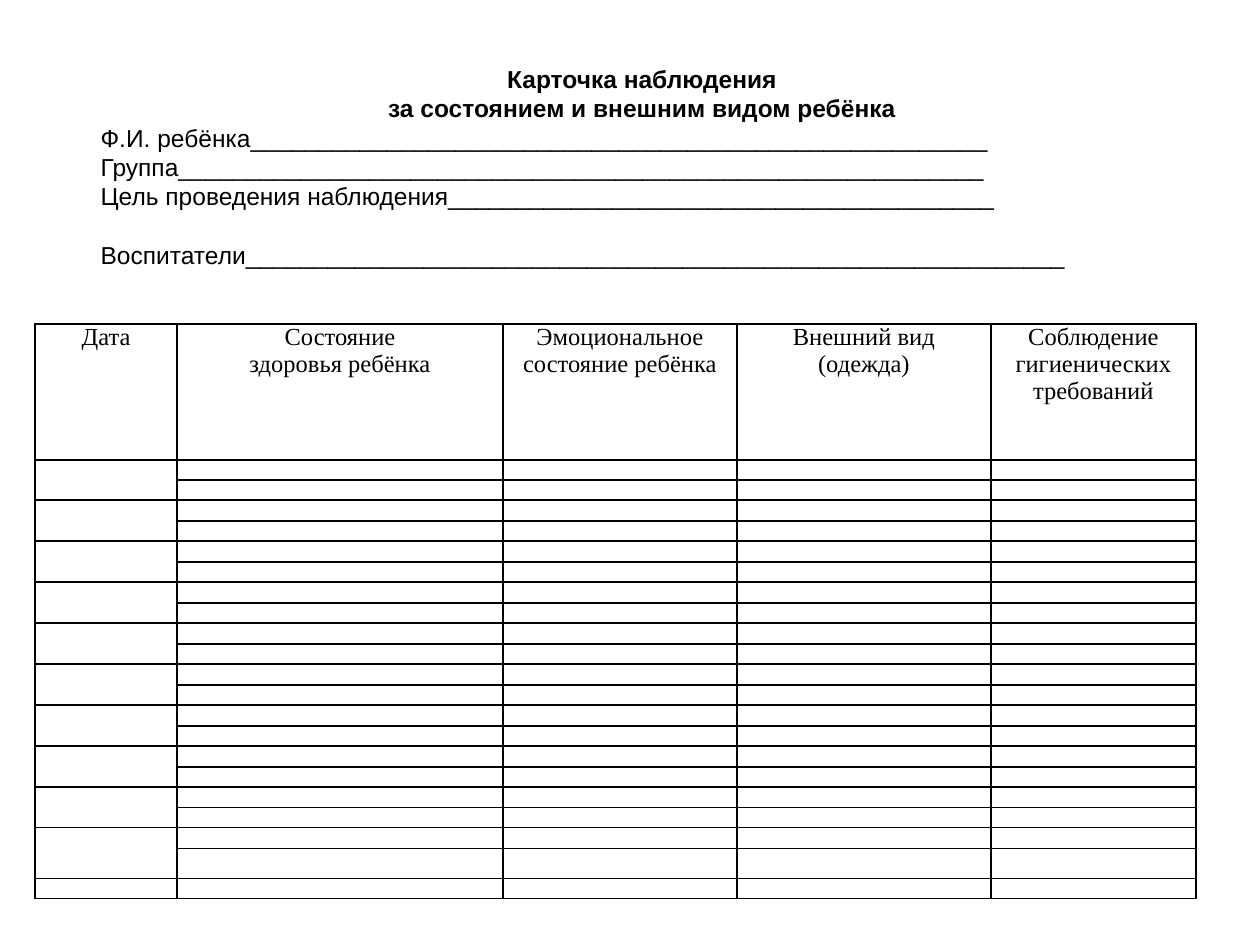
import itertools

import lxml.etree
import pptx
import pptx.dml.color
import pptx.enum.text
import pptx.oxml.ns
import pptx.util

PX = 914400 // 126
BLACK, WHITE = "000000", "FFFFFF"
LINE_PITCH = pptx.util.Pt(16.75)

TITLE = ["Карточка наблюдения", "за состоянием и внешним видом ребёнка"]
FIELDS = [
    "Ф.И. ребёнка______________________________________________________",
    "Группа___________________________________________________________",
    "Цель проведения наблюдения________________________________________",
    "Воспитатели____________________________________________________________",
]
HEADERS = [
    "Дата",
    "Состояние\nздоровья ребёнка",
    "Эмоциональное\nсостояние ребёнка",
    "Внешний вид\n(одежда)",
    "Соблюдение гигиенических требований",
]
COLUMN_WIDTHS = [142, 326, 234, 254, 205]
HEADER_HEIGHT, LAST_PAIR_HEIGHTS = 136, [30, 20]
EVEN_ROWS, EVEN_HEIGHT = 19, 389
DATE_PAIRS = 10


def px(n):
    return pptx.util.Emu(n * PX)


def rgb(color):
    return pptx.dml.color.RGBColor.from_string(color)


def fill_white(item):
    item.fill.solid()
    item.fill.fore_color.rgb = rgb(WHITE)


def sub(parent, tag, **attrs):
    return lxml.etree.SubElement(parent, pptx.oxml.ns.qn(tag), **attrs)


def format_runs(p, font, bold=False):
    for r in p.runs:
        r.font.name, r.font.size, r.font.bold = font, pptx.util.Pt(14), bold
        r.font.color.rgb = rgb(BLACK)


def fill_heading(sp):
    """Centred bold title lines, then the form fields to fill in."""
    sp.left, sp.top, sp.width, sp.height = px(88), px(23), px(1108), px(292)
    fill_white(sp)
    tf = sp.text_frame
    tf.text = "\n".join(TITLE + FIELDS)
    tf.word_wrap = True
    tf.auto_size = pptx.enum.text.MSO_AUTO_SIZE.NONE
    tf.vertical_anchor = pptx.enum.text.MSO_ANCHOR.TOP
    tf.margin_top, tf.margin_bottom = px(41), 0
    align = pptx.enum.text.PP_ALIGN
    for i, p in enumerate(tf.paragraphs):
        in_title = i < len(TITLE)
        p.alignment = align.CENTER if in_title else align.LEFT
        p.line_spacing, p.space_before = LINE_PITCH, 0
        format_runs(p, "Arial", bold=in_title)
    tf.paragraphs[-1].space_before = LINE_PITCH


def format_cell(cell):
    cell.margin_left = cell.margin_right = px(5)
    cell.margin_top = cell.margin_bottom = 0
    tcPr = cell._tc.get_or_add_tcPr()
    for side in ("a:lnL", "a:lnR", "a:lnT", "a:lnB"):
        ln = sub(tcPr, side, w=str(pptx.util.Pt(1)))
        sub(sub(ln, "a:solidFill"), "a:srgbClr", val=BLACK)
    fill_white(cell)
    for p in cell.text_frame.paragraphs:
        if p.runs:
            p.alignment = pptx.enum.text.PP_ALIGN.CENTER
            format_runs(p, "Times New Roman")
        else:
            # A small end mark keeps empty rows at their set height.
            sub(p._p, "a:endParaRPr", sz="800")


def add_observation_table(s):
    edges = [EVEN_HEIGHT * i // EVEN_ROWS for i in range(EVEN_ROWS + 1)]
    even = [b - a for a, b in itertools.pairwise(edges)]
    heights = [HEADER_HEIGHT, *even, *LAST_PAIR_HEIGHTS]
    frame = s.shapes.add_table(len(heights), len(HEADERS), px(35), px(324),
                               px(sum(COLUMN_WIDTHS)), px(sum(heights)))
    table = frame.table
    table.first_row = table.horz_banding = False
    for column, width in zip(table.columns, COLUMN_WIDTHS):
        column.width = px(width)
    for row, height in zip(table.rows, heights):
        row.height = px(height)
    for i, header in enumerate(HEADERS):
        table.cell(0, i).text_frame.text = header
    for cell in table.iter_cells():
        format_cell(cell)
    for i in range(DATE_PAIRS):
        top = 1 + 2 * i
        table.cell(top, 0).merge(table.cell(top + 1, 0))


def main():
    prs = pptx.Presentation()
    prs.slide_width, prs.slide_height = px(1260), px(945)
    s = prs.slides.add_slide(prs.slide_layouts[5])
    fill_heading(s.shapes.title)
    add_observation_table(s)
    prs.save("out.pptx")


if __name__ == "__main__":
    main()
